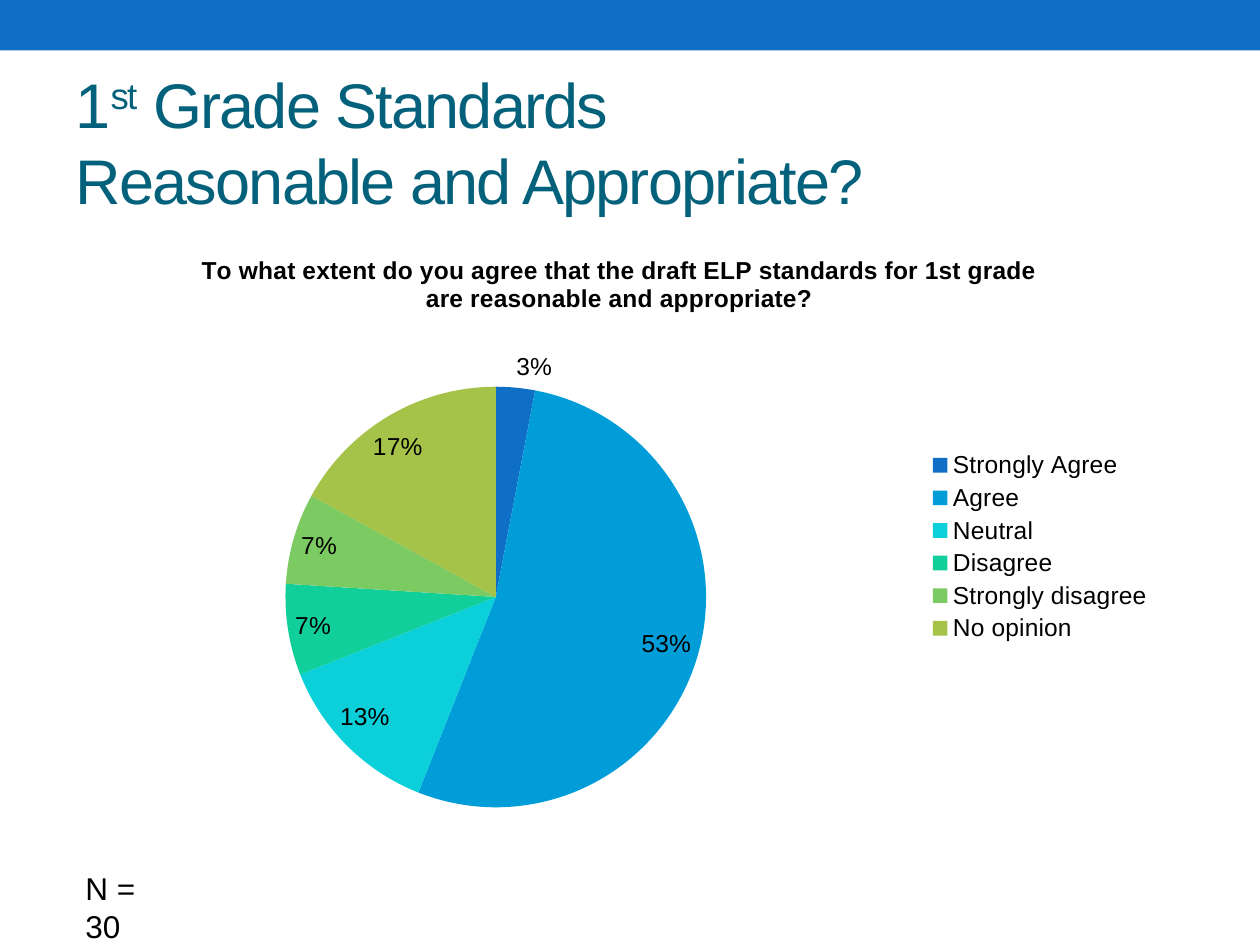
from pptx import Presentation
from pptx.chart.data import CategoryChartData
from pptx.dml.color import RGBColor
from pptx.enum.chart import XL_CHART_TYPE as ChartType
from pptx.enum.chart import XL_LABEL_POSITION as LabelPosition
from pptx.enum.chart import XL_LEGEND_POSITION as LegendPosition
from pptx.enum.shapes import MSO_SHAPE as Shape
from pptx.enum.text import MSO_ANCHOR as Anchor
from pptx.enum.text import MSO_AUTO_SIZE as AutoSize
from pptx.enum.text import PP_ALIGN as Align
from pptx.oxml import parse_xml
from pptx.oxml.ns import nsdecls
from pptx.util import Inches, Pt

# Content
FONT = "Arial"
COLORS = {"band": "0F6FC6", "title": "04617B", "text": "000000"}
TITLE_LINES = [
    [("1", 0), ("st", 30), (" Grade Standards", 0)],  # text, raise in percent
    [("Reasonable and Appropriate?", 0)],
]
QUESTION = ("To what extent do you agree that the draft ELP standards "
            "for 1st grade are reasonable and appropriate?")
ANSWERS = [
    ("Strongly Agree", 0.03, "0F6FC6"),
    ("Agree", 0.53, "009DD9"),
    ("Neutral", 0.13, "0BD0D9"),
    ("Disagree", 0.07, "10CF9B"),
    ("Strongly disagree", 0.07, "7CCA62"),
    ("No opinion", 0.17, "A5C249"),
]
SAMPLE_SIZE = "N = 30"
PLOT_AREA = {"x": 0.191, "y": 0.247, "w": 0.392, "h": 0.665}


def inches(*lengths):
    return [Inches(length) for length in lengths]


def style(font, size, color="text", bold=False):
    for name, value in {"name": FONT, "size": Pt(size), "bold": bold}.items():
        setattr(font, name, value)
    font.color.rgb = RGBColor.from_string(COLORS[color])


def set_frame(frame, anchor):
    values = {"word_wrap": True, "auto_size": AutoSize.NONE,
              "vertical_anchor": anchor}
    for name, value in values.items():
        setattr(frame, name, value)


def add_band(page):
    band = page.shapes.add_shape(Shape.RECTANGLE, *inches(0, 0, 10, 0.4))
    band.shadow.inherit = False
    band.fill.solid()
    band.fill.fore_color.rgb = RGBColor.from_string(COLORS["band"])
    band.line.fill.background()


def add_title(page):
    title = page.shapes.title
    title.left, title.top, title.width, title.height = inches(0.5, 0.58, 9, 1.08)
    set_frame(title.text_frame, Anchor.MIDDLE)
    para = title.text_frame.paragraphs[0]
    para.alignment = Align.LEFT
    for index, line in enumerate(TITLE_LINES):
        if index:
            para.add_line_break()
        for text, rise in line:
            span = para.add_run()
            span.text = text
            style(span.font, 36, "title")
            properties = span._r.get_or_add_rPr()
            properties.set("spc", "-100")
            if rise:
                properties.set("baseline", str(rise * 1000))


def add_sample_size(page):
    box = page.shapes.add_textbox(*inches(0.58, 6.85, 0.86, 0.4))
    set_frame(box.text_frame, Anchor.TOP)
    span = box.text_frame.paragraphs[0].add_run()
    span.text = SAMPLE_SIZE
    style(span.font, 18)


def add_pie(page):
    names, shares, colors = zip(*ANSWERS)
    data = CategoryChartData(number_format="0%")
    data.categories = names
    data.add_series("Series 1", shares)
    chart = page.shapes.add_chart(
        ChartType.PIE, *inches(0.58, 1.83, 8.67, 5.02), data).chart
    style(chart.font, 10)

    # Question above the pie
    chart.has_title = True
    heading = chart.chart_title.text_frame
    heading.text = QUESTION
    style(heading.paragraphs[0].runs[0].font, 14, bold=True)

    # Legend
    chart.has_legend = True
    chart.legend.position = LegendPosition.RIGHT
    chart.legend.include_in_layout = False
    style(chart.legend.font, 14)

    # Slices and their labels
    plot = chart.plots[0]
    plot.vary_by_categories = True
    for index, color in enumerate(colors):
        fill = plot.series[0].points[index].format.fill
        fill.solid()
        fill.fore_color.rgb = RGBColor.from_string(color)
    plot.has_data_labels = True
    labels = plot.data_labels
    values = {"show_value": True, "show_percentage": False,
              "number_format": "0%", "number_format_is_linked": False,
              "position": LabelPosition.BEST_FIT}
    for name, value in values.items():
        setattr(labels, name, value)
    style(labels.font, 14)

    # Fixed place of the pie inside the chart
    plot_area = chart._chartSpace.chart.plotArea
    for old in plot_area.xpath("c:layout"):
        plot_area.remove(old)
    modes = '<c:xMode val="edge"/><c:yMode val="edge"/>'
    places = "".join(f'<c:{key} val="{part}"/>' for key, part in PLOT_AREA.items())
    plot_area.insert(0, parse_xml(
        f'<c:layout {nsdecls("c")}><c:manualLayout>'
        f'<c:layoutTarget val="inner"/>{modes}{places}'
        '</c:manualLayout></c:layout>'))


def main():
    deck = Presentation()
    deck.slide_width, deck.slide_height = inches(10, 7.5)
    page = deck.slides.add_slide(deck.slide_layouts[5])
    add_band(page)
    add_title(page)
    add_sample_size(page)
    add_pie(page)
    deck.save("out.pptx")


if __name__ == "__main__":
    main()
